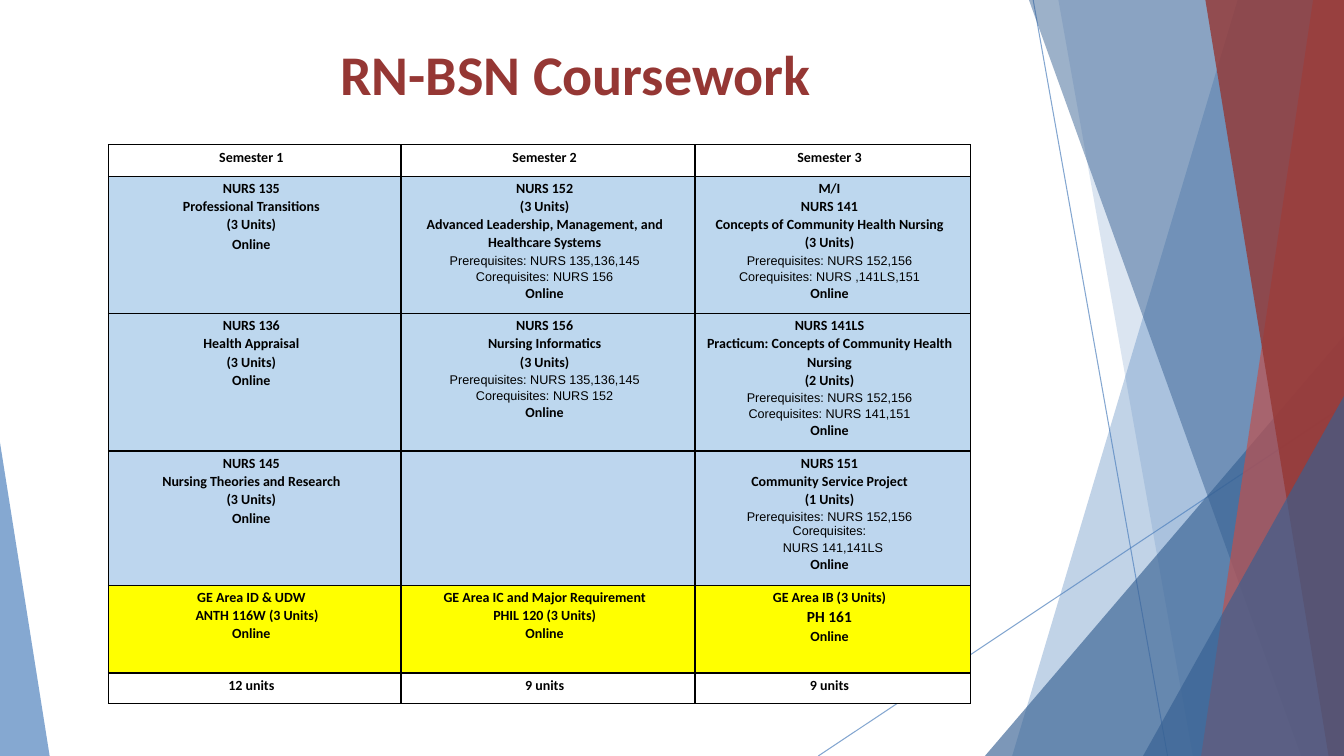
from dataclasses import dataclass

from lxml import etree
from pptx import Presentation
from pptx.dml.color import RGBColor
from pptx.enum.shapes import MSO_CONNECTOR, MSO_SHAPE
from pptx.enum.text import MSO_ANCHOR, PP_ALIGN
from pptx.oxml.ns import qn
from pptx.util import Pt

CENTER = PP_ALIGN.CENTER
MIDDLE = MSO_ANCHOR.MIDDLE
STRAIGHT = MSO_CONNECTOR.STRAIGHT
TRIANGLE = MSO_SHAPE.ISOSCELES_TRIANGLE
WIDTH, HEIGHT = 960, 540
BLUE, NAVY, RED, MAROON = "4F81BD", "366092", "C0504D", "953734"
SKY, PALE, YELLOW, WHITE, BLACK = "BDD7EE", "BDD6EE", "FFFF00", "FFFFFF", "000000"


@dataclass(frozen=True)
class Ray:
    start: tuple[float, float]
    end: tuple[float, float]


@dataclass(frozen=True)
class Band:
    """A full-height area between a slanted left edge and the slide's right edge."""
    top_x: float
    bottom_x: float
    color: str
    opacity: int


@dataclass(frozen=True)
class Wedge:
    left: float
    top: float
    width: float
    apex: float
    color: str
    opacity: int


@dataclass(frozen=True)
class Line:
    text: str
    size: float = 10
    font: str = "Calibri"
    bold: bool = True
    spacing: float = 1.07
    indent: float = 0


@dataclass(frozen=True)
class Row:
    height: float
    fill: str
    cells: tuple[list[Line], list[Line], list[Line]]


def bold(*texts: str) -> list[Line]:
    return [Line(text) for text in texts]


def note(text: str, spacing: float = 1.15, indent: float = 0) -> Line:
    return Line(text, 9, "Arial", False, spacing, indent)


ONLINE = Line("Online")
WIDE_ONLINE = Line("Online", spacing=1.15)
RAYS = [Ray((738, 0), (834, HEIGHT)), Ray((WIDTH, 290), (584.5, HEIGHT))]
DECORATIONS = [
    Band(884, 723, BLUE, 35),
    Band(756, 852, BLUE, 20),
    Wedge(703.5, 240, 256.5, 1, NAVY, 65),
    Band(735, 929.5, NAVY, 49),
    Band(938, 858, RED, 69),
    Band(861, 949, MAROON, 80),
    Wedge(816.5, 283, 143.5, 1, NAVY, 65),
    Wedge(0, 316, 35.5, 0, BLUE, 69),
]
COLUMN_WIDTHS = [209, 210, 197]
ROWS = [
    Row(22.5, WHITE, (bold("Semester 1"), bold("Semester 2"), bold("Semester 3"))),
    Row(97, SKY, (
        bold("NURS 135", "Professional Transitions", "(3 Units)") + [WIDE_ONLINE],
        bold("NURS 152", "(3 Units)",
             "Advanced Leadership, Management, and Healthcare Systems")
        + [note("Prerequisites: NURS 135,136,145"), note("Corequisites: NURS 156"), ONLINE],
        bold("M/I", "NURS 141", "Concepts of Community Health Nursing", "(3 Units)")
        + [note("Prerequisites: NURS 152,156"), note("Corequisites: NURS ,141LS,151"), ONLINE],
    )),
    Row(97, SKY, (
        bold("NURS 136", "Health Appraisal", "(3 Units)", "Online"),
        bold("NURS 156", "Nursing Informatics", "(3 Units)")
        + [note("Prerequisites: NURS 135,136,145"), note("Corequisites: NURS 152"), ONLINE],
        bold("NURS 141LS", "Practicum: Concepts of Community Health Nursing", "(2 Units)")
        + [note("Prerequisites: NURS 152,156"), note("Corequisites: NURS 141,151"), ONLINE],
    )),
    Row(94.5, PALE, (
        bold("NURS 145", "Nursing Theories and Research", "(3 Units)") + [WIDE_ONLINE],
        [],
        bold("NURS 151", "Community Service Project", "(1 Units)")
        + [note("Prerequisites: NURS 152,156"), note("Corequisites:", 1),
           note("NURS 141,141LS", indent=5), ONLINE],
    )),
    Row(62.5, YELLOW, (
        [Line("GE Area ID & UDW"), Line("ANTH 116W (3 Units)", indent=8), ONLINE],
        bold("GE Area IC and Major Requirement", "PHIL 120 (3 Units)", "Online"),
        [Line("GE Area IB (3 Units)"), Line("PH 161", 11), ONLINE],
    )),
    Row(22, WHITE, (bold("12 units"), bold("9 units"), bold("9 units"))),
]


def rgb(color: str) -> RGBColor:
    return RGBColor.from_string(color)


def set_opacity(parent, percent: int) -> None:
    color = parent.find(".//" + qn("a:srgbClr"))
    etree.SubElement(color, qn("a:alpha"), val=str(percent * 1000))


def draw_ray(page, ray: Ray) -> None:
    line = page.shapes.add_connector(STRAIGHT, *map(Pt, ray.start + ray.end))
    line.line.color.rgb = rgb(BLUE)
    line.line.width = Pt(0.75)
    properties = line._element.spPr
    set_opacity(properties, 69)
    etree.SubElement(properties, qn("a:effectLst"))


def draw_decoration(page, item: Band | Wedge) -> None:
    if isinstance(item, Band):
        builder = page.shapes.build_freeform(Pt(item.top_x), 0)
        corners = [(WIDTH, 0), (WIDTH, HEIGHT), (item.bottom_x, HEIGHT)]
        builder.add_line_segments([(Pt(x), Pt(y)) for x, y in corners], close=True)
        shape = builder.convert_to_shape()
    else:
        shape = page.shapes.add_shape(TRIANGLE, Pt(item.left), Pt(item.top),
                                      Pt(item.width), Pt(HEIGHT - item.top))
        shape.adjustments[0] = item.apex
    shape.shadow.inherit = False
    shape.fill.solid()
    shape.fill.fore_color.rgb = rgb(item.color)
    set_opacity(shape._element.spPr, item.opacity)
    shape.line.fill.background()


def write_lines(frame, lines: list[Line], color: str) -> None:
    for index, line in enumerate(lines):
        para = frame.add_paragraph() if index else frame.paragraphs[0]
        para.text = line.text
        para.alignment = CENTER
        para.line_spacing = line.spacing
        para.font.name = line.font
        para.font.size = Pt(line.size)
        para.font.bold = line.bold
        para.font.color.rgb = rgb(color)
        if line.indent:
            para._p.get_or_add_pPr().set("marL", str(Pt(line.indent)))


def add_borders(cell) -> None:
    properties = cell._tc.get_or_add_tcPr()
    for side in ("a:lnL", "a:lnR", "a:lnT", "a:lnB"):
        border = etree.SubElement(properties, qn(side), w=str(Pt(1)))
        fill = etree.SubElement(border, qn("a:solidFill"))
        etree.SubElement(fill, qn("a:srgbClr"), val=BLACK)


def draw_title(page) -> None:
    box = page.shapes.add_textbox(Pt(56), Pt(20), Pt(719), Pt(65))
    frame = box.text_frame
    frame.word_wrap = True
    frame.vertical_anchor = MIDDLE
    write_lines(frame, [Line("RN-BSN Coursework ", 40, spacing=1.0)], MAROON)


def draw_coursework(page) -> None:
    table = page.shapes.add_table(
        len(ROWS), len(COLUMN_WIDTHS), Pt(77.5), Pt(103.5),
        Pt(sum(COLUMN_WIDTHS)), Pt(sum(row.height for row in ROWS))).table
    table.first_row = False
    table.horz_banding = False
    for column, width in zip(table.columns, COLUMN_WIDTHS):
        column.width = Pt(width)
    for table_row, row in zip(table.rows, ROWS):
        table_row.height = Pt(row.height)
        for cell, lines in zip(table_row.cells, row.cells):
            cell.margin_left = cell.margin_top = Pt(2)
            cell.margin_right = cell.margin_bottom = Pt(7)
            add_borders(cell)
            cell.fill.solid()
            cell.fill.fore_color.rgb = rgb(row.fill)
            write_lines(cell.text_frame, lines, BLACK)


def main() -> None:
    deck = Presentation()
    deck.slide_width, deck.slide_height = Pt(WIDTH), Pt(HEIGHT)
    page = deck.slides.add_slide(deck.slide_layouts[6])
    for ray in RAYS:
        draw_ray(page, ray)
    for item in DECORATIONS:
        draw_decoration(page, item)
    draw_title(page)
    draw_coursework(page)
    deck.save("out.pptx")


if __name__ == "__main__":
    main()
